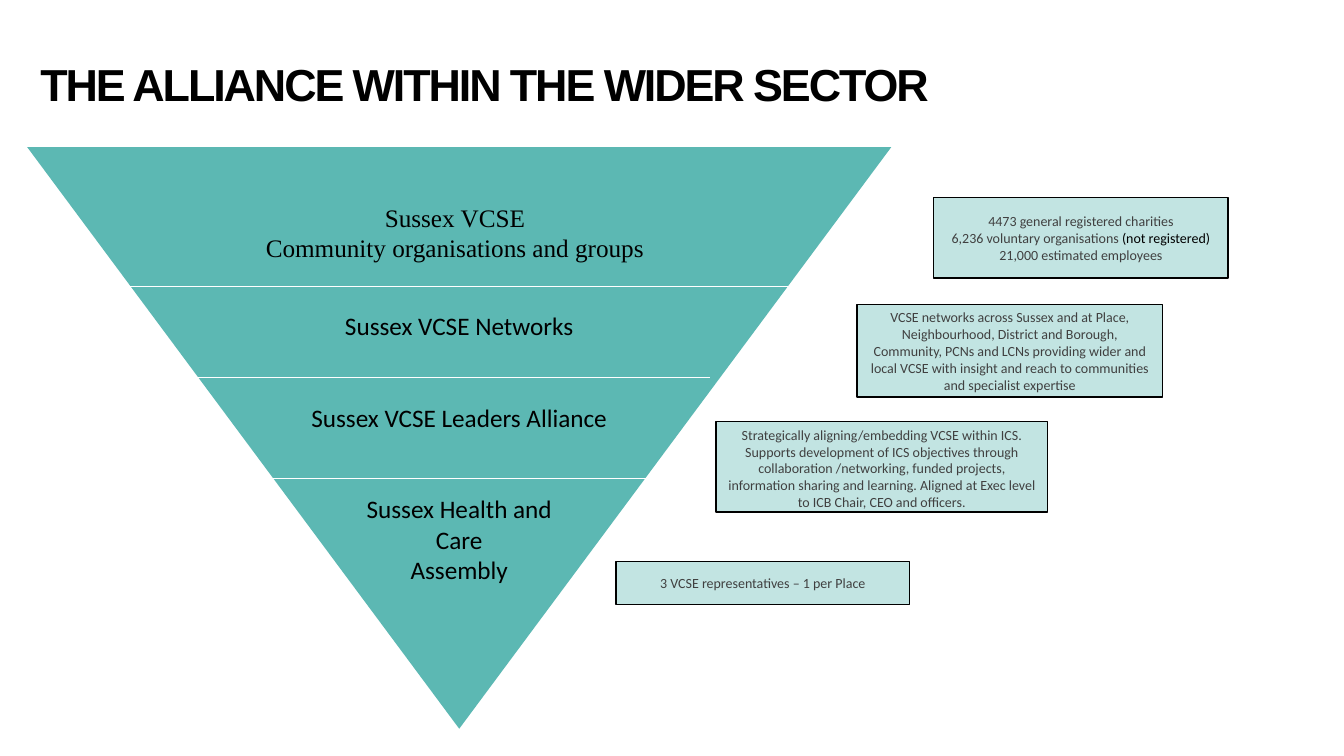
from lxml.etree import SubElement
from pptx import Presentation
from pptx.dml.color import RGBColor
from pptx.enum.shapes import MSO_CONNECTOR as Connector, MSO_SHAPE as Shape
from pptx.enum.text import MSO_ANCHOR as Anchor, PP_ALIGN as Align
from pptx.oxml.ns import qn
from pptx.util import Inches, Pt

WIDTH, HEIGHT = 13.33, 7.5
COLORS = {
    "black": "000000",
    "grey": "404040",
    "white": "FFFFFF",
    "teal": "5CB8B3",
    "mint": "9DD4D1",
}
TITLE_FONT = {"name": "Arial", "size": Pt(32), "bold": True}
SECTOR_FONT = {"name": "Times New Roman", "size": Pt(18)}
LEVEL_FONT = {"name": "Calibri", "size": Pt(18)}
NOTE_FONT = {"name": "Calibri", "size": Pt(10)}

# Each level: its lines of text and the space before it in points
LEVELS = [
    (["Sussex VCSE Networks"], 0),
    (["Sussex VCSE Leaders Alliance"], 44),
    (["Sussex Health and", "Care", "Assembly"], 44),
]
# Dividers as start, end and height, in shares of the funnel's box
DIVIDERS = [(0.05, 0.88, 0.24), (0.12, 0.79, 0.395), (0.22, 0.73, 0.57)]

# Each note: box, anchor, and paragraphs made of (text, colour) spans
NOTES = [
    ((9.26, 1.96, 2.92, 0.8), Anchor.MIDDLE, [
        [("4473 general registered charities", "grey")],
        [("6,236 voluntary organisations ", "grey"), ("(not registered)", "black")],
        [("21,000 estimated employees", "grey")],
    ]),
    ((8.5, 3.02, 3.03, 0.92), Anchor.MIDDLE, [
        [("VCSE networks across Sussex and at Place, Neighbourhood, District and "
          "Borough, Community, PCNs and LCNs providing wider and local VCSE with "
          "insight and reach to communities and specialist expertise", "grey")],
    ]),
    ((7.1, 4.18, 3.29, 0.9), Anchor.TOP, [
        [("Strategically aligning/embedding VCSE within ICS. Supports development "
          "of ICS objectives through collaboration /networking, funded projects, "
          "information sharing and learning. Aligned at Exec level to ICB Chair, "
          "CEO and officers.", "grey")],
    ]),
    ((6.11, 5.57, 2.91, 0.43), Anchor.MIDDLE, [
        [("3 VCSE representatives – 1 per Place", "grey")],
    ]),
]


def color(name):
    return RGBColor.from_string(COLORS[name])


def write(shape, paragraphs, font, anchor=Anchor.TOP, align=Align.CENTER):
    """Fill a shape with paragraphs of (text, colour) spans."""
    frame = shape.text_frame
    frame.word_wrap = True
    frame.vertical_anchor = anchor
    for index, spans in enumerate(paragraphs):
        para = frame.add_paragraph() if index else frame.paragraphs[0]
        para.alignment = align
        for text, shade in spans:
            span = para.add_run()
            span.text = text
            for key, value in font.items():
                setattr(span.font, key, value)
            span.font.color.rgb = color(shade)
    return frame


def add_box(page, kind, box, fill):
    shape = page.shapes.add_shape(kind, *map(Inches, box))
    shape.shadow.inherit = False
    shape.fill.solid()
    shape.fill.fore_color.rgb = color(fill)
    shape.line.fill.background()
    return shape


def add_title(page, box):
    title = page.shapes.add_textbox(*map(Inches, box))
    frame = write(title, [[("THE ALLIANCE WITHIN THE WIDER SECTOR", "black")]],
                  TITLE_FONT, Anchor.MIDDLE, Align.LEFT)
    for side in ("left", "top", "right", "bottom"):
        setattr(frame, f"margin_{side}", 0)
    para = frame.paragraphs[0]
    para.line_spacing = 0.9
    para.runs[0].font._element.set("spc", "-150")


def add_funnel(page, box):
    left, top, width, height = box

    # Inverted triangle with the three lower levels
    funnel = add_box(page, Shape.FLOWCHART_MERGE, box, "teal")
    lines = [[(line, "black")] for level, _ in LEVELS for line in level]
    frame = write(funnel, lines, LEVEL_FONT)
    frame.margin_top = Inches(0.28 * height)
    row = 0
    for level, gap in LEVELS:
        frame.paragraphs[row].space_before = Pt(gap)
        row += len(level)

    # Top level
    sector = page.shapes.add_textbox(*map(Inches, (
        left + 0.2 * width, top + 0.5, 0.59 * width, 0.71)))
    write(sector, [[("Sussex VCSE", "black")],
                   [("Community organisations and groups", "black")]], SECTOR_FONT)

    # Dividers between levels
    for start, end, level in DIVIDERS:
        y = top + level * height
        line = page.shapes.add_connector(Connector.STRAIGHT, *map(Inches, (
            left + start * width, y, left + end * width, y)))
        line.line.color.rgb = color("white")
        line.line.width = Pt(0.5)
        SubElement(line._element.spPr, qn("a:effectLst"))


def add_note(page, box, anchor, paragraphs):
    note = add_box(page, Shape.RECTANGLE, box, "mint")
    note.line.color.rgb = color("black")
    note.line.width = Pt(1)
    # Translucent fill
    tint = note._element.spPr.find(qn("a:solidFill"))[0]
    SubElement(tint, qn("a:alpha"), val="62000")
    write(note, paragraphs, NOTE_FONT, anchor)


def main():
    deck = Presentation()
    deck.slide_width, deck.slide_height = Inches(WIDTH), Inches(HEIGHT)
    page = deck.slides.add_slide(deck.slide_layouts[6])
    add_title(page, (0.4, 0.63, 10.06, 0.47))
    add_funnel(page, (0.27, 1.46, 8.57, 5.77))
    for note in NOTES:
        add_note(page, *note)
    deck.save("out.pptx")


if __name__ == "__main__":
    main()
